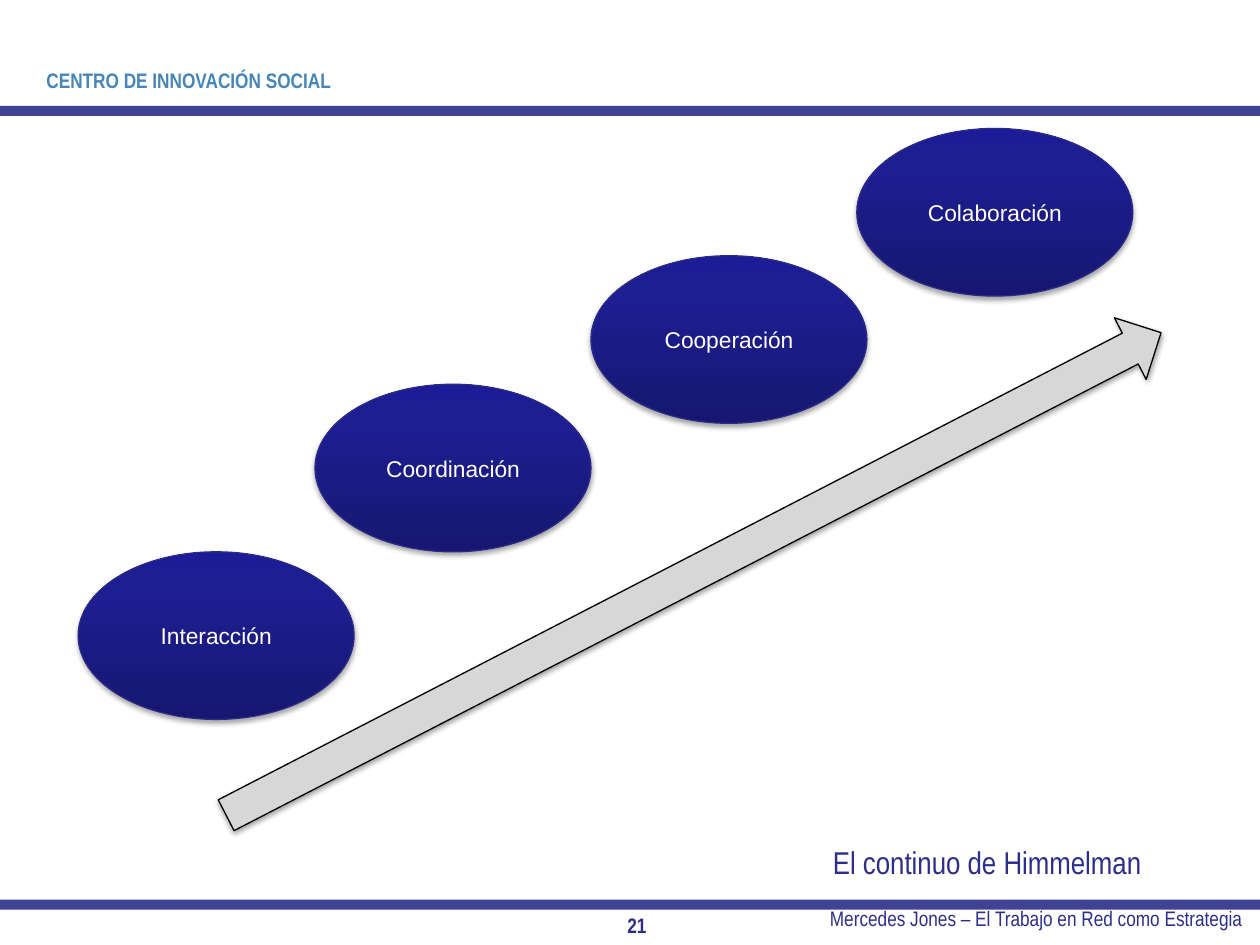
import pptx
import pptx.dml.color
import pptx.enum.shapes
import pptx.enum.text
import pptx.oxml
import pptx.oxml.ns
import pptx.util

Inches = pptx.util.Inches
RGBColor = pptx.dml.color.RGBColor
SHAPE = pptx.enum.shapes.MSO_SHAPE
ANCHOR = pptx.enum.text.MSO_ANCHOR
ALIGN = pptx.enum.text.PP_ALIGN

BAND = RGBColor(0x40, 0x42, 0x96)
HEADER = RGBColor(0x45, 0x85, 0xB7)
NAVY = RGBColor(0x2D, 0x2D, 0x8A)
OUTLINE = RGBColor(0x2A, 0x2A, 0x89)
BLACK = RGBColor(0, 0, 0)
WHITE = RGBColor(0xFF, 0xFF, 0xFF)
BLUE_STOPS = [(0, RGBColor(0x17, 0x17, 0x71)), (80, RGBColor(0x1E, 0x1E, 0x93)),
              (100, RGBColor(0x1C, 0x1C, 0x96))]
GREY_STOPS = [(0, RGBColor(0xBD, 0xBD, 0xBD)), (35, RGBColor(0xD1, 0xD1, 0xD1)),
              (100, RGBColor(0xEE, 0xEE, 0xEE))]


def write(shape, text, size=12, color=NAVY, font="Arial Narrow", bold=False,
          align=ALIGN.LEFT, anchor=ANCHOR.TOP):
    frame = shape.text_frame
    frame.word_wrap = True
    frame.auto_size = pptx.enum.text.MSO_AUTO_SIZE.NONE
    frame.vertical_anchor = anchor
    para = frame.paragraphs[0]
    para.alignment = align
    span = para.add_run()
    span.text = text
    span.font.size = pptx.util.Pt(size)
    span.font.name = font
    span.font.bold = bold
    span.font.color.rgb = color


def style_raised(shape, stops, outline, opacity, distance):
    """Give the shape an upward gradient, a thin outline and a soft shadow below."""
    namespace = pptx.oxml.ns.nsdecls("a")
    marks = "".join(f'<a:gs pos="{place * 1000}"><a:srgbClr val="{color}"/></a:gs>'
                    for place, color in stops)
    properties = shape.element.spPr
    properties.append(pptx.oxml.parse_xml(
        f'<a:gradFill {namespace} rotWithShape="1"><a:gsLst>{marks}</a:gsLst>'
        '<a:lin ang="16200000" scaled="0"/></a:gradFill>'))
    shape.line.color.rgb = outline
    shape.line.width = pptx.util.Pt(0.75)
    properties.append(pptx.oxml.parse_xml(
        f'<a:effectLst {namespace}><a:outerShdw blurRad="{pptx.util.Pt(3.1)}" '
        f'dist="{pptx.util.Pt(distance)}" dir="5400000" rotWithShape="0">'
        f'<a:srgbClr val="000000"><a:alpha val="{opacity * 1000}"/></a:srgbClr>'
        '</a:outerShdw></a:effectLst>'))


deck = pptx.Presentation()
deck.slide_width = Inches(10)
deck.slide_height = Inches(7.5)
page = deck.slides.add_slide(deck.slide_layouts[5])

# Header and footer bands
for top in (7.14, 0.84):
    band = page.shapes.add_shape(SHAPE.RECTANGLE, 0, Inches(top), Inches(10), Inches(0.08))
    band.shadow.inherit = False
    band.fill.solid()
    band.fill.fore_color.rgb = BAND
    band.line.fill.background()

header = page.shapes.add_textbox(Inches(0.27), Inches(0.36), Inches(2.48), Inches(0.56))
write(header, "CENTRO DE INNOVACIÓN SOCIAL", color=HEADER, bold=True, anchor=ANCHOR.MIDDLE)

# Stages of the continuum, rising to the right
stages = [("Interacción", 0.62, 4.38), ("Coordinación", 2.5, 3.05),
          ("Cooperación", 4.69, 2.03), ("Colaboración", 6.8, 1.02)]
for name, left, top in stages:
    stage = page.shapes.add_shape(SHAPE.OVAL, Inches(left), Inches(top),
                                  Inches(2.19), Inches(1.33))
    style_raised(stage, BLUE_STOPS, OUTLINE, opacity=35, distance=1.8)
    write(stage, name, size=13, color=WHITE, font="Arial",
          align=ALIGN.CENTER, anchor=ANCHOR.MIDDLE)

arrow = page.shapes.add_shape(SHAPE.RIGHT_ARROW, Inches(1.33), Inches(4.28),
                              Inches(8.35), Inches(0.55))
arrow.rotation = 332.7
style_raised(arrow, GREY_STOPS, BLACK, opacity=38, distance=1.6)

title = page.shapes.title
title.left, title.top = Inches(3.2), Inches(6.64)
title.width, title.height = Inches(5.96), Inches(0.4)
write(title, "El continuo de Himmelman", size=18, align=ALIGN.RIGHT)

footer = page.shapes.add_textbox(Inches(5.31), Inches(7.14), Inches(4.65), Inches(0.39))
write(footer, "Mercedes Jones – El Trabajo en Red como Estrategia", align=ALIGN.RIGHT)

number = page.shapes.add_textbox(Inches(4.84), Inches(7.19), Inches(0.43), Inches(0.31))
write(number, "21", bold=True, align=ALIGN.CENTER, anchor=ANCHOR.MIDDLE)

deck.save("out.pptx")
